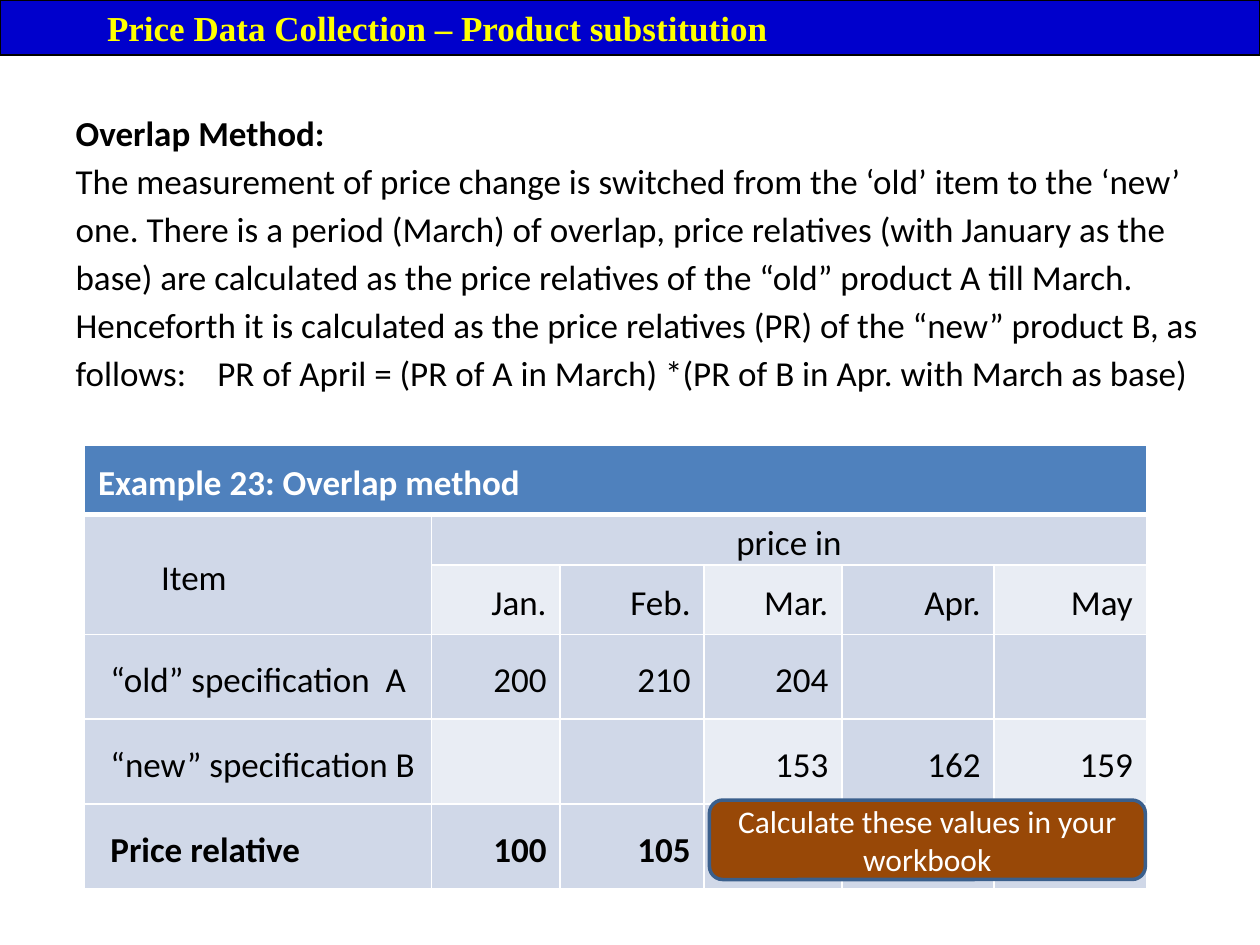
from pptx import Presentation
from pptx.util import Pt
from pptx.dml.color import RGBColor
from pptx.enum.shapes import MSO_SHAPE as Shape
from pptx.enum.text import MSO_ANCHOR as Anchor, MSO_AUTO_SIZE as Fit, PP_ALIGN as Align
from lxml import etree

BLACK = RGBColor(0x00, 0x00, 0x00)
WHITE = RGBColor(0xFF, 0xFF, 0xFF)
YELLOW = RGBColor(0xFF, 0xFF, 0x00)
NAVY = RGBColor(0x00, 0x00, 0xCC)
HEAD = RGBColor(0x4F, 0x81, 0xBD)
BAND = RGBColor(0xD0, 0xD8, 0xE8)
LIGHT = RGBColor(0xE9, 0xED, 0xF4)
BROWN = RGBColor(0x98, 0x48, 0x07)
STEEL = RGBColor(0x3A, 0x5F, 0x8C)
NS = "http://schemas.openxmlformats.org/drawingml/2006/main"


def add_run(para, text, color=BLACK, size=20, bold=False, face="Calibri"):
    run = para.add_run()
    run.text = text
    font = run.font
    font.name, font.size, font.bold = face, Pt(size), bold
    font.color.rgb = color


def set_edges(cell, widths):
    props = cell._tc.get_or_add_tcPr()
    for i, (side, width) in enumerate(zip("LRTB", widths)):
        line = etree.Element(f"{{{NS}}}ln{side}", w=str(Pt(width)))
        fill = etree.SubElement(line, f"{{{NS}}}solidFill")
        etree.SubElement(fill, f"{{{NS}}}srgbClr", val=str(WHITE))
        props.insert(i, line)


prs = Presentation()
prs.slide_width, prs.slide_height = Pt(720), Pt(540)
slide = prs.slides.add_slide(prs.slide_layouts[5])

# Method description in the title
title = slide.shapes.title
title.left, title.top, title.width, title.height = Pt(36), Pt(49), Pt(658.8), Pt(187.2)
frame = title.text_frame
frame.word_wrap = True
frame.auto_size = Fit.NONE
frame.vertical_anchor = Anchor.MIDDLE
para = frame.paragraphs[0]
para.alignment = Align.LEFT
para.line_spacing = 1.14
add_run(para, "Overlap Method: ", bold=True)
para.add_line_break()
add_run(para, "The measurement of price change is switched from the ‘old’ item to the ‘new’ one. "
        "There is a period (March) of overlap, price relatives (with January as the base) are "
        "calculated as the price relatives of the “old” product A till March. ")
para.add_line_break()
add_run(para, "Henceforth it is calculated as the price relatives (PR) of the “new” product B, "
        "as follows:\tPR of April = (PR of A in March) *(PR of B in Apr. with March as base)")
# Tab stop that sets the formula apart
stops = etree.SubElement(para._p.get_or_add_pPr(), f"{{{NS}}}tabLst")
etree.SubElement(stops, f"{{{NS}}}tab", pos=str(Pt(81)), algn="l")

# Price table
ROWS = [
    ["Example 23: Overlap method", "", "", "", "", ""],
    ["Item", "price in", "", "", "", ""],
    ["", "Jan.", "Feb.", "Mar.", "Apr.", "May"],
    ["“old” specification  A", "200", "210", "204", "", ""],
    ["“new” specification B", "", "", "153", "162", "159"],
    ["Price relative", "100", "105", "", "", ""],
]
WIDTHS = [198.3, 73.4, 82.3, 78.7, 87, 87]
HEIGHTS = [39.6, 25.2, 39.6, 48.5, 48.5, 48.5]
table = slide.shapes.add_table(6, 6, Pt(48.4), Pt(254.4), Pt(sum(WIDTHS)), Pt(sum(HEIGHTS))).table
for col, width in zip(table.columns, WIDTHS):
    col.width = Pt(width)
for row, height in zip(table.rows, HEIGHTS):
    row.height = Pt(height)
for first, last in [((0, 0), (0, 5)), ((1, 0), (2, 0)), ((1, 1), (1, 5))]:
    table.cell(*first).merge(table.cell(*last))

for r, row in enumerate(ROWS):
    for c, text in enumerate(row):
        cell = table.cell(r, c)
        cell.fill.solid()
        light = r in (2, 4) and c % 2
        cell.fill.fore_color.rgb = HEAD if r == 0 else LIGHT if light else BAND
        set_edges(cell, (1, 1, 3 if r == 1 else 1, 3 if r == 0 else 1))
        cell.vertical_anchor = Anchor.MIDDLE
        indent = 0 if r == 0 or c else 36 if r == 1 else 7
        cell.margin_left, cell.margin_right = Pt(7.7 + indent), Pt(7.7)
        cell.margin_top, cell.margin_bottom = Pt(0.7), Pt(0)
        if text:
            para = cell.text_frame.paragraphs[0]
            para.line_spacing = 1.15
            para.alignment = Align.JUSTIFY if c == 0 else Align.CENTER if r == 1 else Align.RIGHT
            add_run(para, text, WHITE if r == 0 else BLACK, bold=r in (0, 5))

# Task callout over the last row
note = slide.shapes.add_shape(Shape.ROUNDED_RECTANGLE, Pt(405.4), Pt(457.2), Pt(249.1), Pt(45.4))
note.shadow.inherit = False
note.fill.solid()
note.fill.fore_color.rgb = BROWN
note.line.color.rgb = STEEL
note.line.width = Pt(2)
frame = note.text_frame
frame.word_wrap = True
frame.vertical_anchor = Anchor.MIDDLE
para = frame.paragraphs[0]
para.alignment = Align.CENTER
add_run(para, "Calculate these values in your workbook", WHITE, 18)

# Header bar
bar = slide.shapes.add_shape(Shape.RECTANGLE, Pt(0), Pt(0), Pt(720), Pt(31.5))
bar.shadow.inherit = False
bar.fill.solid()
bar.fill.fore_color.rgb = NAVY
bar.line.color.rgb = BLACK
bar.line.width = Pt(0.75)
frame = bar.text_frame
frame.word_wrap = True
frame.auto_size = Fit.SHAPE_TO_FIT_TEXT
frame.vertical_anchor = Anchor.TOP
frame.margin_left = Pt(61.2)
para = frame.paragraphs[0]
para.alignment = Align.LEFT
add_run(para, "Price Data Collection – Product substitution", YELLOW, bold=True, face="Times New Roman")

prs.save("out.pptx")
